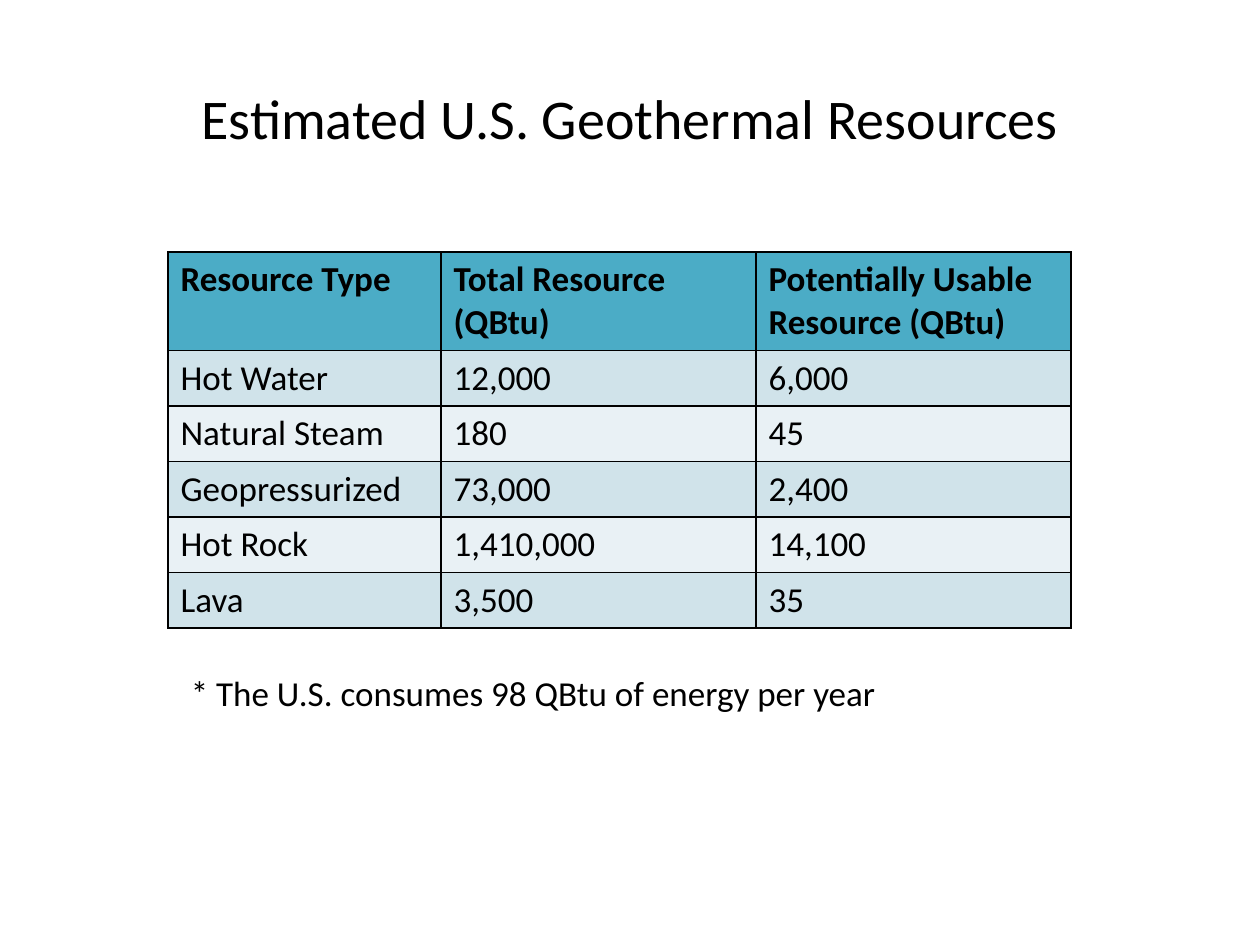
from lxml import etree
from pptx import Presentation
from pptx.dml.color import RGBColor
from pptx.enum.text import MSO_ANCHOR, MSO_AUTO_SIZE, PP_ALIGN
from pptx.oxml.ns import qn
from pptx.util import Pt

BLACK = RGBColor(0x00, 0x00, 0x00)
HEADER_TEAL = RGBColor(0x4B, 0xAC, 0xC6)
BAND_DARK = RGBColor(0xD0, 0xE3, 0xEA)
BAND_LIGHT = RGBColor(0xE9, 0xF1, 0xF5)

RESOURCES = [
    ("Resource Type", "Total Resource (QBtu)", "Potentially Usable Resource (QBtu)"),
    ("Hot Water", "12,000", "6,000"),
    ("Natural Steam", "180", "45"),
    ("Geopressurized", "73,000", "2,400"),
    ("Hot Rock", "1,410,000", "14,100"),
    ("Lava", "3,500", "35"),
]
COLUMN_WIDTHS = [156, 180, 180]
HEADER_HEIGHT, ROW_HEIGHT = 56, 31.7


def write(text_frame, text, size, bold=False):
    text_frame.text = text
    font = text_frame.paragraphs[0].runs[0].font
    font.name, font.size, font.bold = "Calibri", Pt(size), bold
    font.color.rgb = BLACK


def add_borders(cell):
    properties = cell._tc.get_or_add_tcPr()
    for position, side in enumerate(("a:lnL", "a:lnR", "a:lnT", "a:lnB")):
        border = etree.Element(qn(side), w=str(Pt(1)))
        fill = etree.SubElement(border, qn("a:solidFill"))
        etree.SubElement(fill, qn("a:srgbClr"), val=str(BLACK))
        properties.insert(position, border)  # borders come before the fill


presentation = Presentation()
presentation.slide_width, presentation.slide_height = Pt(720), Pt(540)
slide = presentation.slides.add_slide(presentation.slide_layouts[5])

# Title
title = slide.shapes.title
title.left, title.top, title.width, title.height = Pt(36), Pt(30), Pt(648), Pt(74)
write(title.text_frame, "Estimated U.S. Geothermal Resources", 32)
title.text_frame.vertical_anchor = MSO_ANCHOR.MIDDLE
title.text_frame.paragraphs[0].alignment = PP_ALIGN.CENTER

# Resource table
row_heights = [HEADER_HEIGHT] + [ROW_HEIGHT] * (len(RESOURCES) - 1)
resource_table = slide.shapes.add_table(
    len(RESOURCES), len(COLUMN_WIDTHS),
    Pt(96), Pt(144), Pt(sum(COLUMN_WIDTHS)), Pt(sum(row_heights))).table
for column, width in zip(resource_table.columns, COLUMN_WIDTHS):
    column.width = Pt(width)

for row_number, (row, height, values) in enumerate(
        zip(resource_table.rows, row_heights, RESOURCES)):
    row.height = Pt(height)
    is_header = row_number == 0
    band = HEADER_TEAL if is_header else BAND_DARK if row_number % 2 else BAND_LIGHT
    for cell, value in zip(row.cells, values):
        write(cell.text_frame, value, 20, bold=is_header)
        cell.fill.solid()
        cell.fill.fore_color.rgb = band
        add_borders(cell)

# Consumption note
consumption_note = slide.shapes.add_textbox(Pt(102), Pt(380), Pt(438), Pt(31.5))
consumption_note.text_frame.word_wrap = True
consumption_note.text_frame.auto_size = MSO_AUTO_SIZE.SHAPE_TO_FIT_TEXT
write(consumption_note.text_frame, "* The U.S. consumes 98 QBtu of energy per year", 20)

presentation.save("out.pptx")
